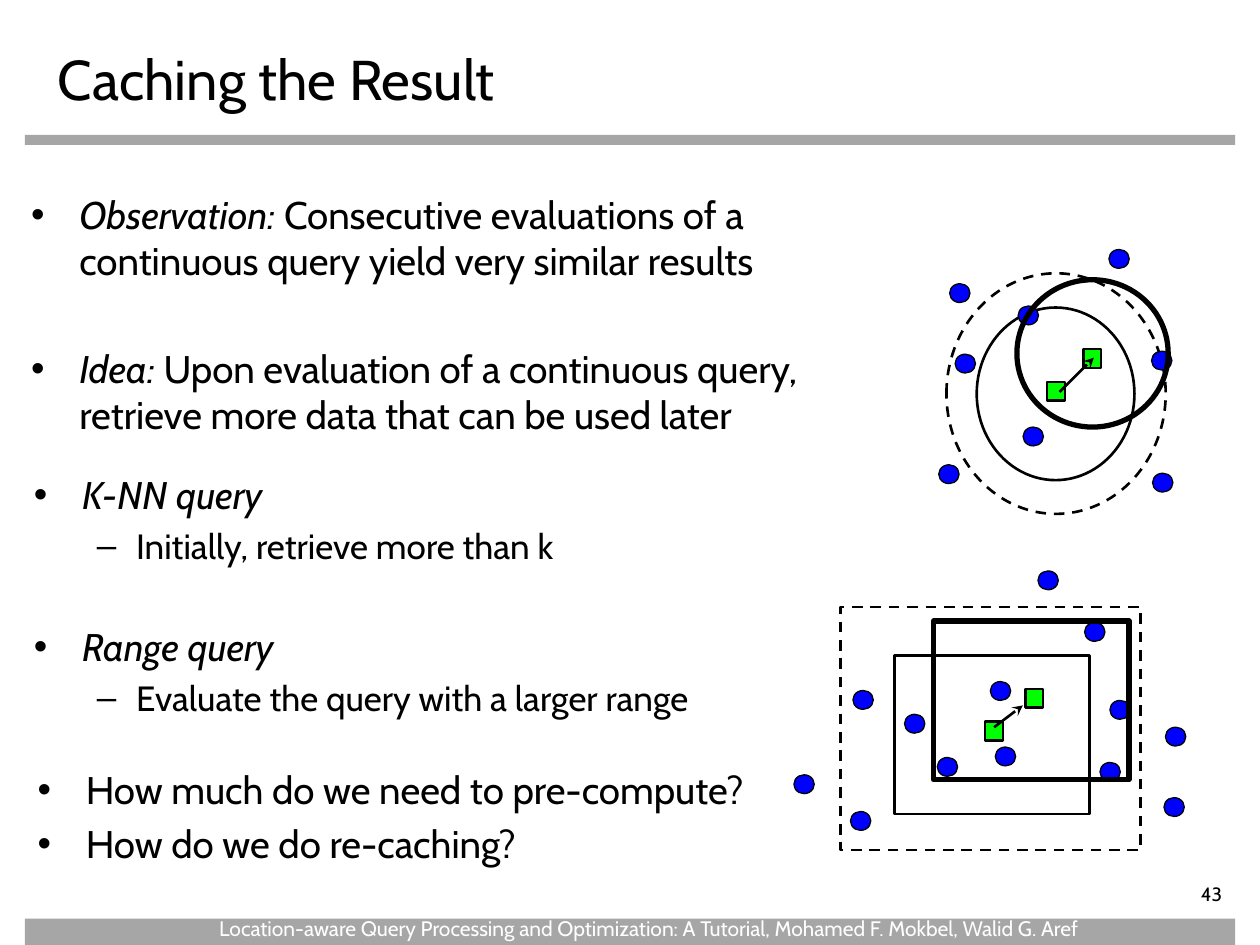
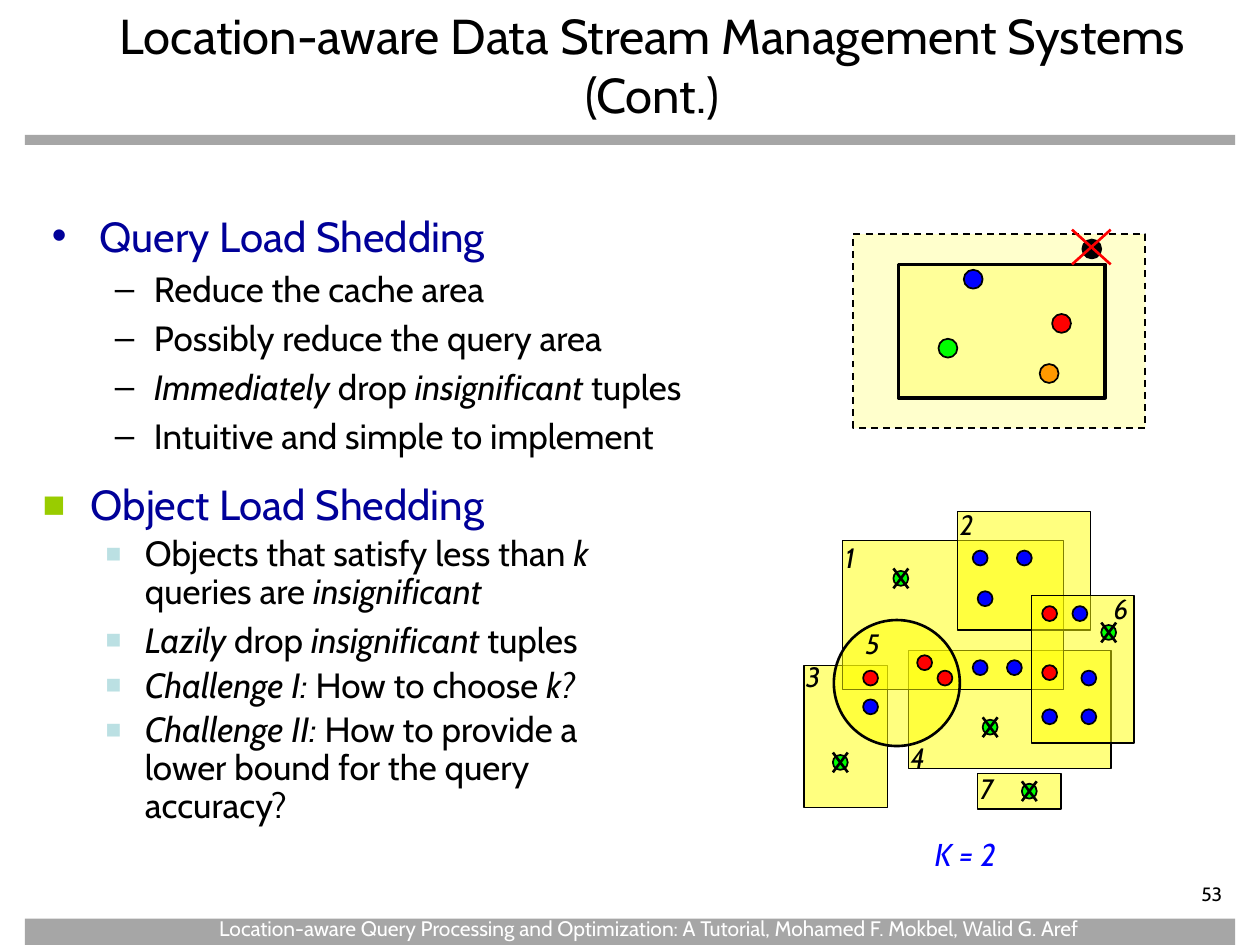
from dataclasses import dataclass
from typing import Optional

from lxml.etree import SubElement
from pptx import Presentation
from pptx.dml.color import RGBColor
from pptx.enum.dml import MSO_LINE as Dash
from pptx.enum.shapes import MSO_CONNECTOR as Link, MSO_SHAPE as Kind
from pptx.enum.text import MSO_ANCHOR as Anchor, MSO_AUTO_SIZE as Fit, PP_ALIGN as Align
from pptx.oxml.ns import qn
from pptx.util import Cm, Pt

FONT = "Cabin"
BLACK = RGBColor(0x00, 0x00, 0x00)
WHITE = RGBColor(0xFF, 0xFF, 0xFF)
GRAY = RGBColor(0xA6, 0xA6, 0xA6)
NAVY = RGBColor(0x00, 0x00, 0x99)
BLUE = RGBColor(0x00, 0x00, 0xFF)
GREEN = RGBColor(0x00, 0xFF, 0x00)
RED = RGBColor(0xFF, 0x00, 0x00)
ORANGE = RGBColor(0xFF, 0x99, 0x00)
YELLOW = RGBColor(0xFF, 0xFF, 0x00)
CREAM = RGBColor(0xFF, 0xFF, 0xCC)
LEMON = RGBColor(0xFF, 0xFF, 0x99)
LIME = RGBColor(0x99, 0xCC, 0x00)
ICE = RGBColor(0xBB, 0xE0, 0xE3)
FOOTER = ("Location-aware Query Processing and Optimization: A Tutorial, "
          "Mohamed F. Mokbel, Walid G. Aref")


@dataclass
class Style:
    level: int
    size: int
    sign: str
    ink: RGBColor = BLACK
    tint: Optional[RGBColor] = None
    scale: int = 100


POINT = Style(0, 22, "•", tint=BLACK)
DASH = Style(1, 20, "–")
HEAD = Style(0, 24, "•", NAVY)
BOX_HEAD = Style(0, 24, "■", NAVY, LIME, 90)
BOX_ITEM = Style(1, 20, "■", BLACK, ICE, 75)
INDENTS = [(0.97, 0.97), (2.06, 0.79)]


def place(item, area):
    item.left, item.top, item.width, item.height = map(Cm, area)


def ink_run(run, size, color, slant=False):
    font = run.font
    font.name, font.size, font.italic = FONT, Pt(size), slant
    font.color.rgb = color


def add_label(slide, area, text, size, color=BLACK, slant=False):
    box = slide.shapes.add_textbox(*map(Cm, area))
    frame = box.text_frame
    frame.word_wrap = True
    frame.text = text
    ink_run(frame.paragraphs[0].runs[0], size, color, slant)
    return frame


def set_title(slide, area, text, size, align, anchor):
    title = slide.shapes.title
    place(title, area)
    frame = title.text_frame
    frame.auto_size = Fit.NONE
    frame.vertical_anchor = anchor
    frame.text = text
    line = frame.paragraphs[0]
    line.alignment = align
    ink_run(line.runs[0], size, BLACK)


def add_mark(para, style):
    margin, hang = INDENTS[style.level]
    para.level = style.level
    props = para._p.get_or_add_pPr()
    props.set("marL", str(Cm(margin)))
    props.set("indent", str(-Cm(hang)))
    if style.tint is not None:
        tint = SubElement(props, qn("a:buClr"))
        SubElement(tint, qn("a:srgbClr"), val=str(style.tint))
    SubElement(props, qn("a:buSzPct"), val=str(style.scale * 1000))
    SubElement(props, qn("a:buFont"), typeface="Arial")
    SubElement(props, qn("a:buChar"), char=style.sign)


def fill_list(frame, items):
    frame.word_wrap = True
    frame.auto_size = Fit.NONE
    for index, (style, text, *extra) in enumerate(items):
        para = frame.add_paragraph() if index else frame.paragraphs[0]
        add_mark(para, style)
        gap, pitch = (extra + [None, None])[:2]
        para.space_before = Pt((gap or style.size * 0.2) if index else 0)
        if pitch:
            para.line_spacing = pitch
        for turn, part in enumerate(text.split("_")):
            if part:
                run = para.add_run()
                run.text = part
                ink_run(run, style.size, style.ink, turn % 2 == 1)


def add_body(slide, area, items):
    body = slide.placeholders[1]
    place(body, area)
    fill_list(body.text_frame, items)


def add_list(slide, area, items):
    fill_list(slide.shapes.add_textbox(*map(Cm, area)).text_frame, items)


def add_form(slide, kind, area, fill=None, weight=1.5, dash=False, alpha=None):
    form = slide.shapes.add_shape(kind, *map(Cm, area))
    form.shadow.inherit = False
    if fill is None:
        form.fill.background()
    else:
        form.fill.solid()
        form.fill.fore_color.rgb = fill
    if alpha:
        color = form.fill._xPr.find(qn("a:solidFill"))[0]
        SubElement(color, qn("a:alpha"), val=str(alpha * 1000))
    if weight:
        form.line.color.rgb = BLACK
        form.line.width = Pt(weight)
    else:
        form.line.fill.background()
    if dash:
        form.line.dash_style = Dash.DASH


def add_spots(slide, kind, spots, wide, high, fill, weight):
    for x, y in spots:
        area = x - wide / 2, y - high / 2, wide, high
        add_form(slide, kind, area, fill, weight)


def add_line(slide, ends, color=BLACK, arrow=False):
    link = slide.shapes.add_connector(Link.STRAIGHT, *map(Cm, ends))
    link.line.color.rgb = color
    link.line.width = Pt(1.5)
    if arrow:
        SubElement(link.line._get_or_add_ln(), qn("a:tailEnd"), type="stealth")
    SubElement(link._element.spPr, qn("a:effectLst"))


def add_cross(slide, x, y, dx, dy, color=BLACK):
    for side in (dx, -dx):
        add_line(slide, (x + side, y - dy, x - side, y + dy), color)


def add_frame(slide, number):
    for top, high in ((2.72, 0.2), (18.52, 0.53)):
        add_form(slide, Kind.RECTANGLE, (0.5, top, 24.4, high), GRAY, 0)
    add_label(slide, (4.17, 18.34, 19.81, 0.76), FOOTER, 12, WHITE)
    page = add_label(slide, (22.1, 17.78, 2.79, 0.56), str(number), 11)
    page.margin_left = page.margin_top = page.margin_bottom = 0
    page.margin_right = Cm(0.25)
    page.paragraphs[0].alignment = Align.RIGHT


def add_move(slide, kind, first, cache, moved, objects, focus, arrow):
    add_form(slide, kind, first)
    add_form(slide, kind, cache, dash=True)
    add_spots(slide, Kind.OVAL, objects, 0.41, 0.38, BLUE, 0.75)
    add_form(slide, kind, moved, weight=3)
    add_spots(slide, Kind.RECTANGLE, focus, 0.36, 0.38, GREEN, 1.5)
    add_line(slide, arrow, arrow=True)


def add_cache(slide):
    add_form(slide, Kind.RECTANGLE, (17.2, 4.72, 5.89, 3.91), CREAM, 1, True)
    add_form(slide, Kind.RECTANGLE, (18.11, 5.33, 4.17, 2.69), LEMON, 2)
    for x, y, fill in ((22.01, 5.02, BLACK), (19.11, 7.02, GREEN),
                       (19.62, 5.63, BLUE), (21.4, 6.52, RED),
                       (21.15, 7.53, ORANGE)):
        add_spots(slide, Kind.OVAL, [(x, y)], 0.38, 0.38, fill, 1)
    add_cross(slide, 22, 4.98, 0.39, 0.35, RED)


def add_queries(slide):
    queries = [
        ("3", (16.21, 13.41, 1.68, 2.87), (16, 13.18)),
        ("4", (18.31, 13.11, 4.09, 2.39), (18.11, 14.81)),
        ("1", (16.99, 10.9, 4.45, 3), (16.79, 10.77)),
        ("2", (19.3, 10.31, 2.69, 2.39), (19.1, 10.11)),
        ("6", (20.8, 12.01, 2.06, 2.97), (22.2, 11.81)),
        ("7", (19.71, 15.6, 1.68, 0.71), (19.51, 15.42)),
        ("5", (16.81, 12.5, 2.54, 2.54), (17.2, 12.5)),
    ]
    for name, area, spot in queries:
        ring = name == "5"
        add_form(slide, Kind.OVAL if ring else Kind.RECTANGLE, area, YELLOW,
                 1.5 if ring else 0.75, alpha=50)
    for name, area, spot in queries:
        add_label(slide, (*spot, 0.81, 0.94), name, 16, slant=True)

    shared = [(18.64, 13.36), (17.55, 13.67), (21.16, 13.56),
              (21.16, 12.37), (19.05, 13.67)]
    kept = [(17.55, 14.25), (20.45, 13.46), (19.76, 11.25), (20.65, 11.25),
            (19.86, 12.07), (19.76, 13.46), (21.95, 13.67), (21.95, 14.45),
            (21.16, 14.45), (21.77, 12.37)]
    dropped = [(18.16, 11.66), (22.35, 12.75), (19.96, 14.66),
               (16.94, 15.37), (20.75, 15.95)]
    for spots, fill in ((shared, RED), (kept, BLUE), (dropped, GREEN)):
        add_spots(slide, Kind.OVAL, spots, 0.3, 0.3, fill, 1)
    for x, y in dropped:
        add_cross(slide, x, y, 0.15, 0.2)
    add_label(slide, (18.59, 16.71, 2.49, 1.02), "K = 2", 18, BLUE, True)


def build_caching(slide):
    add_frame(slide, 43)
    set_title(slide, (0.91, 0.76, 23.93, 1.96), "Caching the Result", 32,
              Align.LEFT, Anchor.TOP)
    add_list(slide, (0.38, 3.73, 17.53, 6.76), [
        (POINT, "_Observation:_ Consecutive evaluations of a continuous "
                "query yield very similar results"),
        (POINT, "_Idea:_ Upon evaluation of a continuous query, retrieve "
                "more data that can be used later", 35),
    ])
    add_body(slide, (0.43, 9.37, 14.83, 5.77), [
        (POINT, "_K-NN query_"),
        (DASH, "Initially, retrieve more than k"),
        (POINT, "_Range query_", 32.5),
        (DASH, "Evaluate the query with a larger range"),
    ])
    add_list(slide, (0.51, 15.32, 17.53, 2.41), [
        (POINT, "How much do we need to pre-compute?"),
        (POINT, "How do we do re-caching?"),
    ])
    add_move(slide, Kind.OVAL, (19.69, 6.2, 3.18, 3.48),
             (19.08, 5.51, 4.42, 4.85), (20.5, 5.64, 3.05, 2.97),
             [(19.46, 7.33), (20.83, 8.8), (23.42, 7.27), (19.13, 9.56),
              (22.56, 5.22), (19.35, 5.91), (23.44, 9.73), (20.73, 6.36)],
             [(21.29, 7.89), (22.02, 7.23)], (21.36, 7.9, 22.05, 7.21))
    add_move(slide, Kind.RECTANGLE, (18.03, 13.21, 3.94, 3.2),
             (16.94, 12.24, 6.05, 4.9), (18.82, 12.52, 3.94, 3.2),
             [(21.13, 11.7), (22.58, 14.31), (17.4, 14.11), (22.38, 15.56),
              (18.44, 14.59), (20.27, 15.25), (19.1, 15.46), (20.17, 13.93),
              (17.35, 16.55), (22.07, 12.74), (16.21, 15.81), (23.7, 14.85),
              (23.67, 16.27)],
             [(20.04, 14.74), (20.85, 14.08)], (20.04, 14.66, 20.62, 14.22))


def build_shedding(slide):
    add_frame(slide, 53)
    set_title(slide, (0.89, 0.13, 24.51, 2.34),
              "Location-aware Data Stream Management Systems (Cont.)", 28,
              Align.CENTER, Anchor.MIDDLE)
    add_body(slide, (0.79, 4.11, 14.5, 4.9), [
        (HEAD, "Query Load Shedding"),
        (DASH, "Reduce the cache area"),
        (DASH, "Possibly reduce the query area"),
        (DASH, "_Immediately_ drop _insignificant_ tuples"),
        (DASH, "Intuitive and simple to implement"),
    ])
    add_list(slide, (0.61, 9.53, 12.5, 8.2), [
        (BOX_HEAD, "Object Load Shedding"),
        (BOX_ITEM, "Objects that satisfy less than _k _queries are "
                   "_insignificant_", None, 0.9),
        (BOX_ITEM, "_Lazily_ drop _insignificant_ tuples"),
        (BOX_ITEM, "_Challenge I:_ How to choose _k?_", None, 0.9),
        (BOX_ITEM, "_Challenge II: _How to provide a lower bound for the "
                   "query accuracy?", None, 0.9),
    ])
    add_queries(slide)
    add_cache(slide)


def main():
    deck = Presentation()
    deck.slide_width, deck.slide_height = Cm(25.4), Cm(19.05)
    for build in (build_caching, build_shedding):
        build(deck.slides.add_slide(deck.slide_layouts[1]))
    deck.save("out.pptx")


if __name__ == "__main__":
    main()
